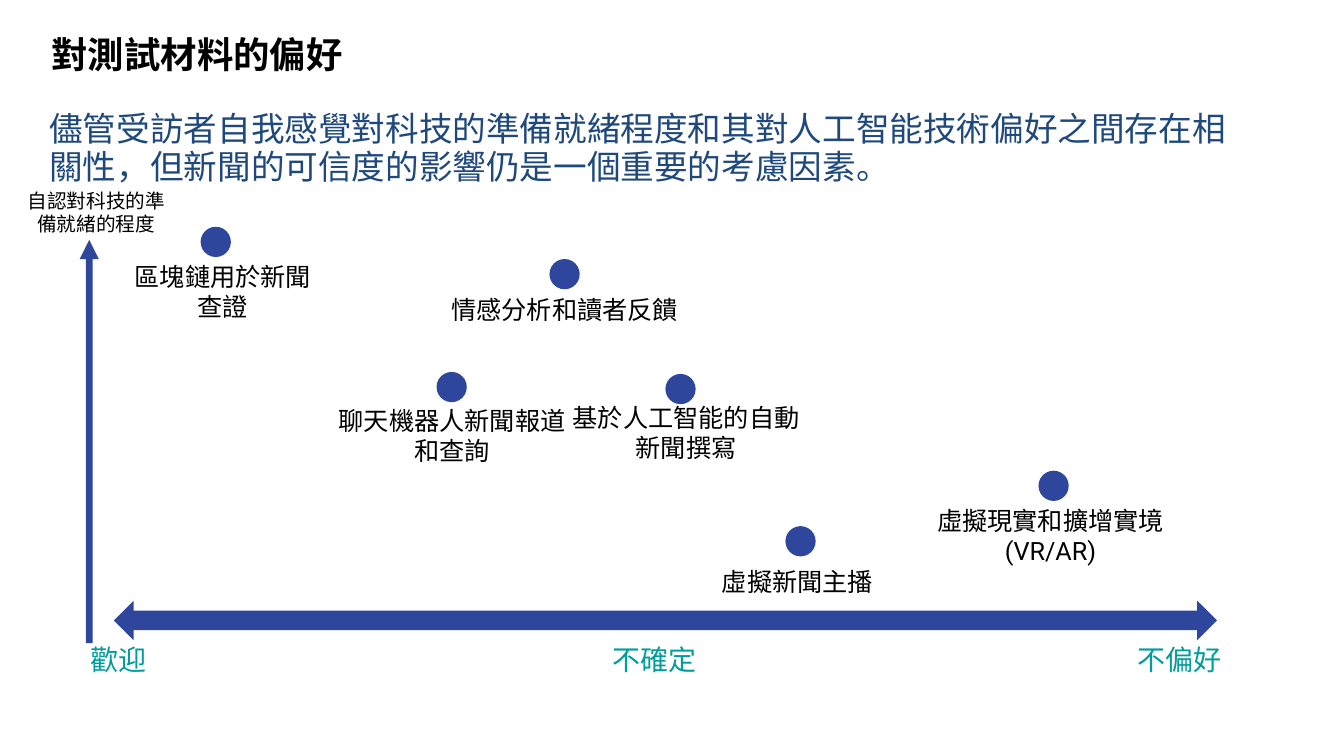
"""Build the slide on preferences for the tested materials."""
from dataclasses import dataclass

from lxml import etree
from pptx import Presentation
from pptx import util as u
from pptx.dml.color import RGBColor
from pptx.enum import shapes, text
from pptx.oxml import ns

PX = 9144
BLACK = RGBColor(0x00, 0x00, 0x00)
NAVY = RGBColor(0x1F, 0x49, 0x7D)
BLUE = RGBColor(0x2E, 0x46, 0x9C)
TEAL = RGBColor(0x00, 0x9D, 0x9C)
LEFT = text.PP_ALIGN.LEFT
MID = text.PP_ALIGN.CENTER
DOT = 30


@dataclass(frozen=True)
class Run:
    words: str
    face: str


@dataclass(frozen=True)
class Label:
    x: int
    y: int
    w: int
    h: int
    runs: tuple[Run, ...]
    size: int
    color: RGBColor
    align: text.PP_ALIGN = LEFT
    bold: bool = False
    lead: float | None = None


@dataclass(frozen=True)
class Item:
    dot_x: int
    dot_y: int
    x: int
    y: int
    w: int
    h: int
    runs: tuple[Run, ...]


@dataclass(frozen=True)
class Arrow:
    kind: shapes.MSO_SHAPE
    x: int
    y: int
    w: int
    h: int
    shaft: float
    head: float


TITLE = Label(51, 31, 600, 45, (Run("對測試材料的偏好", "Noto Sans CJK TC"),),
              26, BLACK, bold=True)
LABELS = (
    Label(49, 108, 1184, 116,
          (Run("儘管受訪者自我感覺對科技的準備就緒程度和其對人工智能技術偏好之間存在相關性，"
               "但新聞的可信度的影響仍是一個重要的考慮因素。", "Arial"),),
          24, NAVY, lead=27.4),
    Label(26, 186, 139, 48, (Run("自認對科技的準備就緒的程度", "Arial"),),
          14, BLACK, MID),
    Label(90, 636, 119, 35, (Run("歡迎", "Roboto"),), 20, TEAL),
    Label(607, 636, 92, 35, (Run("不確定", "Roboto"),), 20, TEAL),
    Label(1128, 636, 124, 35, (Run("不偏好", "Roboto"),), 20, TEAL),
)
ITEMS = (
    Item(199, 225, 127, 258, 188, 63, (Run("區塊鏈用於新聞查證", "Calibri"),)),
    Item(545, 257, 430, 291, 260, 32, (Run("情感分析和讀者反饋", "Calibri"),)),
    Item(433, 369, 333, 401, 231, 63, (Run("聊天機器人新聞報道和查詢", "Calibri"),)),
    Item(660, 371, 566, 398, 229, 63, (Run("基於人工智能的自動新聞撰寫", "Calibri"),)),
    Item(1030, 467, 914, 500, 256, 63,
         (Run("虛擬現實和擴增實境", "Calibri"), Run("(VR/AR)", "Roboto"))),
    Item(779, 522, 682, 561, 218, 32, (Run("虛擬新聞主播", "Calibri"),)),
)
ARROWS = (
    Arrow(shapes.MSO_SHAPE.UP_ARROW, 79, 238, 19, 400, 0.35, 1.0),
    Arrow(shapes.MSO_SHAPE.LEFT_RIGHT_ARROW, 113, 596, 1094, 39, 0.5, 0.5),
)


def write(box, label: Label) -> None:
    """Place a text shape and fill it run by run."""
    box.left, box.top = label.x * PX, label.y * PX
    box.width, box.height = label.w * PX, label.h * PX
    frame = box.text_frame
    frame.word_wrap = True
    frame.auto_size = text.MSO_AUTO_SIZE.NONE
    frame.vertical_anchor = text.MSO_ANCHOR.TOP
    frame.margin_left = frame.margin_right = frame.margin_bottom = 0
    frame.margin_top = PX
    para = frame.paragraphs[0]
    para.alignment = label.align
    if label.lead:
        para.line_spacing = u.Pt(label.lead)
    for part in label.runs:
        run = para.add_run()
        run.text = part.words
        font = run.font
        font.name, font.size, font.bold = part.face, u.Pt(label.size), label.bold
        font.color.rgb = label.color
        east = etree.SubElement(run._r.get_or_add_rPr(), ns.qn("a:ea"))
        east.set("typeface", part.face)


def add_label(slide, label: Label) -> None:
    """Add a text box for a label."""
    write(slide.shapes.add_textbox(0, 0, PX, PX), label)


def add_solid(slide, kind: shapes.MSO_SHAPE, x: int, y: int, w: int, h: int):
    """Add a plain blue preset shape."""
    shape = slide.shapes.add_shape(kind, x * PX, y * PX, w * PX, h * PX)
    shape.shadow.inherit = False
    shape.fill.solid()
    shape.fill.fore_color.rgb = BLUE
    shape.line.fill.background()
    return shape


def add_item(slide, item: Item) -> None:
    """Add a dot of the chart with its caption."""
    add_solid(slide, shapes.MSO_SHAPE.OVAL, item.dot_x, item.dot_y, DOT, DOT)
    add_label(slide, Label(item.x, item.y, item.w, item.h, item.runs, 18, BLACK, MID))


def add_arrow(slide, arrow: Arrow) -> None:
    """Add an axis arrow."""
    shape = add_solid(slide, arrow.kind, arrow.x, arrow.y, arrow.w, arrow.h)
    shape.adjustments[0] = arrow.shaft
    shape.adjustments[1] = arrow.head


def main() -> None:
    """Build and save the slide."""
    deck = Presentation()
    deck.slide_width, deck.slide_height = 1333 * PX, 750 * PX
    slide = deck.slides.add_slide(deck.slide_layouts[5])
    write(slide.shapes.title, TITLE)
    for label in LABELS:
        add_label(slide, label)
    for arrow in ARROWS:
        add_arrow(slide, arrow)
    for item in ITEMS:
        add_item(slide, item)
    deck.save("out.pptx")


if __name__ == "__main__":
    main()
